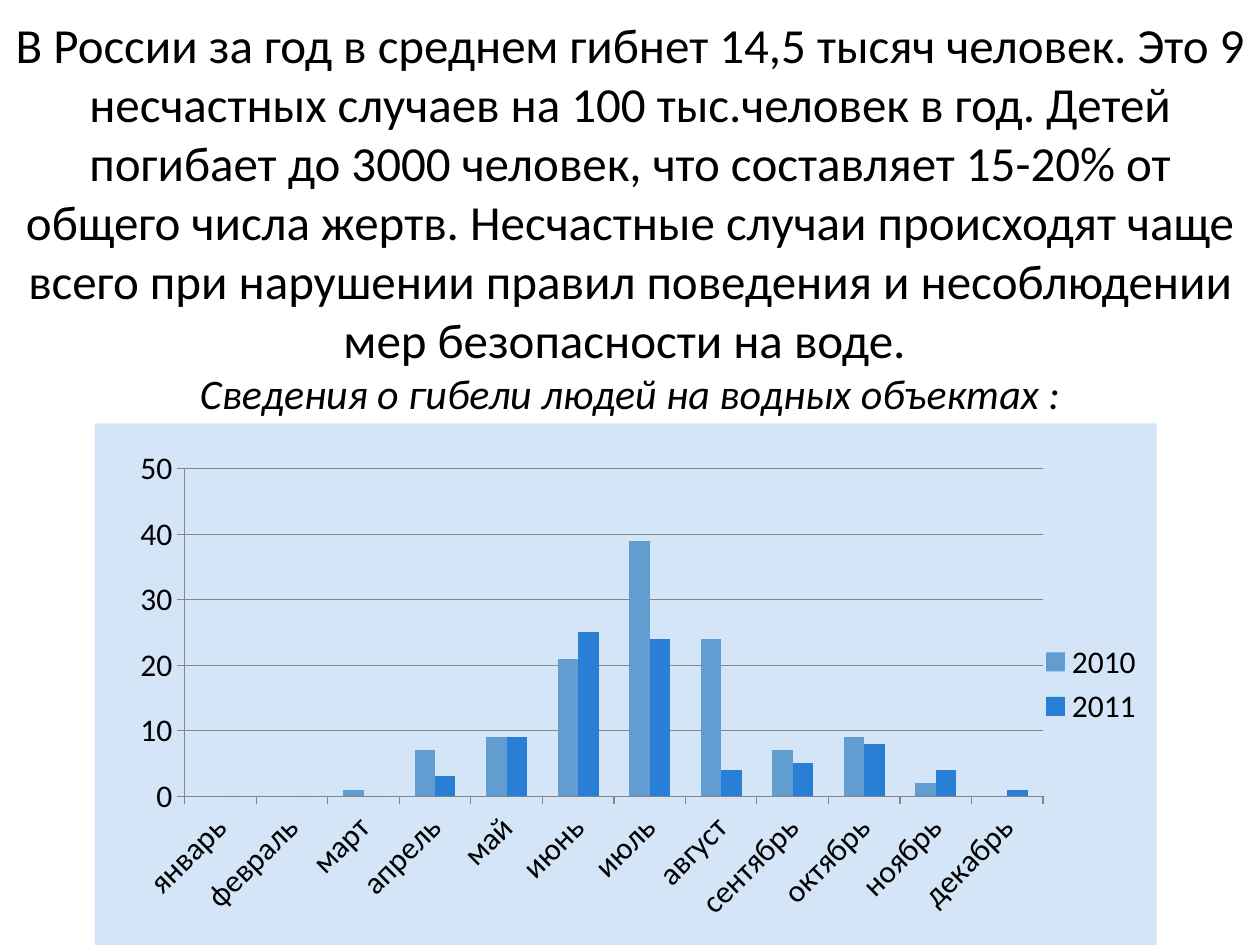
"""Build a slide on drowning statistics with a clustered column chart by month."""
from dataclasses import dataclass

from lxml import etree
from pptx import Presentation
from pptx import util as u
from pptx.chart import data as cd
from pptx.dml.color import RGBColor
from pptx.enum import chart as ch
from pptx.enum import text
from pptx.oxml import parse_xml
from pptx.oxml.ns import nsdecls, qn


@dataclass(frozen=True)
class Theme:
    font: str = "Calibri"
    ink: str = "000000"
    grid: str = "868686"
    panel: str = "D4E5F7"
    title_size: int = 28
    subtitle_size: int = 24
    chart_size: int = 18


@dataclass(frozen=True)
class Box:
    left: float
    top: float
    width: float
    height: float

    def lengths(self) -> list:
        return [u.Inches(v) for v in (self.left, self.top, self.width, self.height)]


@dataclass(frozen=True)
class Year:
    name: str
    deaths: tuple
    color: str


THEME = Theme()
TITLE = (
    "В России за год в среднем гибнет 14,5 тысяч человек. "
    "Это 9 несчастных случаев на 100 тыс.человек в год. "
    "Детей погибает до 3000 человек, что составляет 15-20% от общего числа жертв. "
    "Несчастные случаи происходят чаще всего при нарушении правил поведения "
    "и несоблюдении мер безопасности на воде. "
)
SUBTITLE = "Сведения о гибели людей на водных объектах :"
MONTHS = ("январь", "февраль", "март", "апрель", "май", "июнь",
          "июль", "август", "сентябрь", "октябрь", "ноябрь", "декабрь")
YEARS = (
    Year("2010", (0, 0, 1, 7, 9, 21, 39, 24, 7, 9, 2, 0), "629DD1"),
    Year("2011", (0, 0, 0, 3, 9, 25, 24, 4, 5, 8, 4, 1), "297FD5"),
)
PLOT = Box(0.085, 0.087, 0.808, 0.628)


def style_font(font, size: int, italic: bool = False) -> None:
    font.name = THEME.font
    font.size = u.Pt(size)
    font.italic = italic
    font.color.rgb = RGBColor.from_string(THEME.ink)


def add_title(s, box: Box) -> None:
    tf = s.shapes.add_textbox(*box.lengths()).text_frame
    tf.word_wrap = True
    tf.vertical_anchor = text.MSO_ANCHOR.MIDDLE
    p = tf.paragraphs[0]
    p.alignment = text.PP_ALIGN.CENTER
    r = p.add_run()
    r.text = TITLE
    style_font(r.font, THEME.title_size)
    p.add_line_break()
    r = p.add_run()
    r.text = SUBTITLE
    style_font(r.font, THEME.subtitle_size, italic=True)


def fill_chart(chart, color: str) -> None:
    chart._chartSpace.find(qn("c:chart")).addnext(parse_xml(
        f'<c:spPr {nsdecls("c", "a")}><a:solidFill><a:srgbClr val="{color}"/></a:solidFill>'
        '<a:ln><a:noFill/></a:ln></c:spPr>'))


def place_plot(chart, box: Box) -> None:
    area = chart._chartSpace.find(qn("c:chart")).find(qn("c:plotArea"))
    for old in area.findall(qn("c:layout")):
        area.remove(old)
    layout = etree.Element(qn("c:layout"))
    manual = etree.SubElement(layout, qn("c:manualLayout"))
    settings = (("layoutTarget", "inner"), ("xMode", "edge"), ("yMode", "edge"),
                ("x", box.left), ("y", box.top), ("w", box.width), ("h", box.height))
    for tag, value in settings:
        etree.SubElement(manual, qn(f"c:{tag}"), val=str(value))
    area.insert(0, layout)


def add_chart(s, box: Box) -> None:
    data = cd.CategoryChartData()
    data.categories = MONTHS
    for year in YEARS:
        data.add_series(year.name, year.deaths)
    chart = s.shapes.add_chart(
        ch.XL_CHART_TYPE.COLUMN_CLUSTERED, *box.lengths(), data).chart
    style_font(chart.font, THEME.chart_size)
    chart.has_title = False
    chart.has_legend = True
    chart.legend.position = ch.XL_LEGEND_POSITION.RIGHT
    chart.legend.include_in_layout = False
    plot = chart.plots[0]
    plot.gap_width = 150
    plot.overlap = 0
    plot.vary_by_categories = False
    for series, year in zip(plot.series, YEARS):
        series.format.fill.solid()
        series.format.fill.fore_color.rgb = RGBColor.from_string(year.color)
    axes = (chart.category_axis, chart.value_axis)
    for axis in axes:
        axis.major_tick_mark = ch.XL_TICK_MARK.OUTSIDE
    chart.value_axis.has_major_gridlines = True
    chart.value_axis.minimum_scale = 0
    chart.value_axis.maximum_scale = 50
    chart.value_axis.major_unit = 10
    for part in (*axes, chart.value_axis.major_gridlines):
        part.format.line.color.rgb = RGBColor.from_string(THEME.grid)
        part.format.line.width = u.Pt(0.75)
    fill_chart(chart, THEME.panel)
    place_plot(chart, PLOT)


def main() -> None:
    prs = Presentation()
    prs.slide_width, prs.slide_height = u.Inches(10), u.Inches(7.5)
    s = prs.slides.add_slide(prs.slide_layouts[6])
    add_title(s, Box(0, 0, 10, 3.44))
    add_chart(s, Box(0.75, 3.36, 8.43, 4.14))
    prs.save("out.pptx")


if __name__ == "__main__":
    main()
